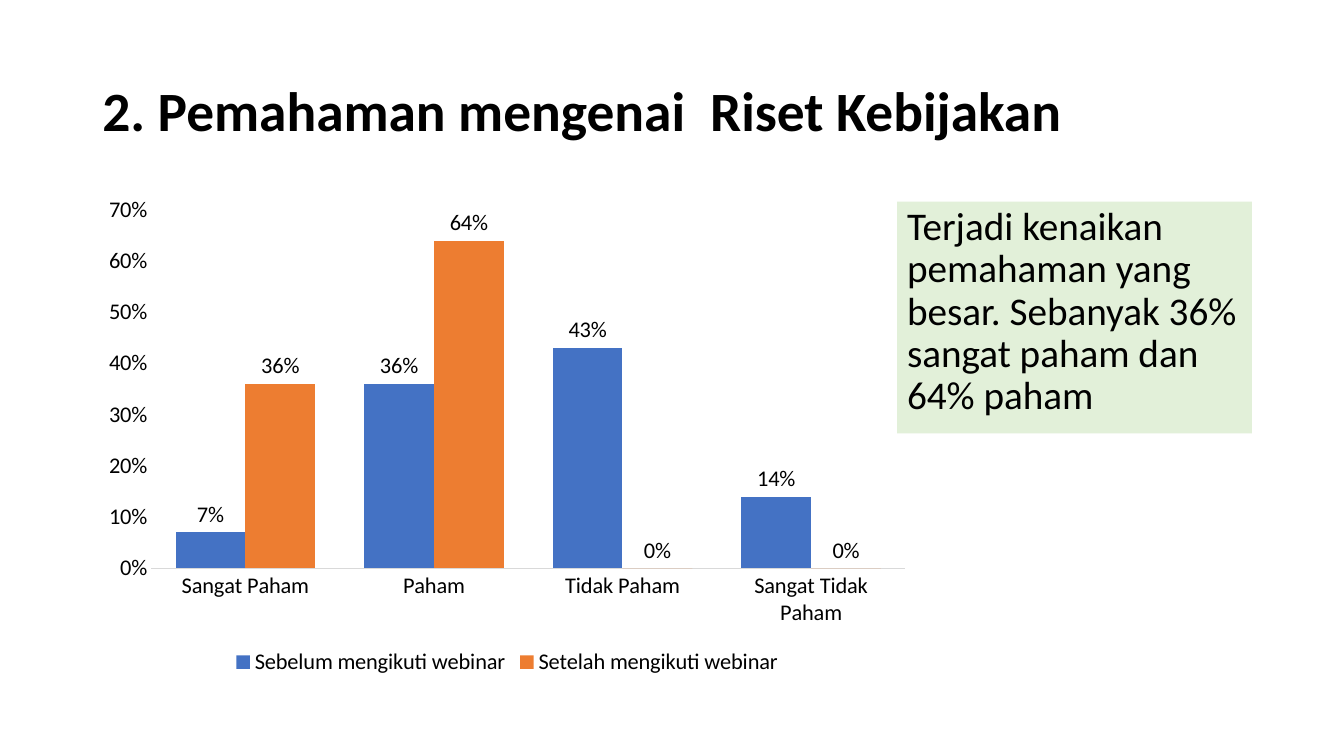
from dataclasses import dataclass

from pptx import Presentation
from pptx.chart.data import CategoryChartData
from pptx.dml.color import RGBColor
from pptx.enum.chart import XL_CHART_TYPE as ChartType
from pptx.enum.chart import XL_LABEL_POSITION as LabelPosition
from pptx.enum.chart import XL_LEGEND_POSITION as LegendPosition
from pptx.enum.chart import XL_TICK_MARK as TickMark
from pptx.enum.text import MSO_ANCHOR as Anchor
from pptx.util import Pt


@dataclass(frozen=True)
class Theme:
    font: str = "Calibri"
    ink: RGBColor = RGBColor(0x00, 0x00, 0x00)
    panel: RGBColor = RGBColor(0xE2, 0xF0, 0xD9)
    axis: RGBColor = RGBColor(0xD9, 0xD9, 0xD9)
    before: RGBColor = RGBColor(0x44, 0x72, 0xC4)
    after: RGBColor = RGBColor(0xED, 0x7D, 0x31)
    title_size: float = 39.6
    body_size: float = 28
    chart_size: float = 16


THEME = Theme()
PERCENT = "0%"
CATEGORIES = ["Sangat Paham", "Paham", "Tidak Paham", "Sangat Tidak Paham"]
SERIES = [
    ("Sebelum mengikuti webinar", [0.07, 0.36, 0.43, 0.14], THEME.before),
    ("Setelah mengikuti webinar", [0.36, 0.64, 0, 0], THEME.after),
]


def style_font(font, size, bold=False):
    font.name = THEME.font
    font.size = Pt(size)
    font.bold = bold
    font.color.rgb = THEME.ink


def add_text(page, bounds, text, size, anchor, bold=False, fill=None):
    box = page.shapes.add_textbox(*map(Pt, bounds))
    if fill is not None:
        box.fill.solid()
        box.fill.fore_color.rgb = fill
    frame = box.text_frame
    frame.word_wrap = True
    frame.vertical_anchor = anchor
    frame.text = text
    para = frame.paragraphs[0]
    para.line_spacing = 0.9
    for span in para.runs:
        style_font(span.font, size, bold)


def style_axes(chart):
    for axis in (chart.category_axis, chart.value_axis):
        axis.major_tick_mark = TickMark.NONE
        axis.minor_tick_mark = TickMark.NONE
        axis.has_major_gridlines = False
        style_font(axis.tick_labels.font, THEME.chart_size)
    category_line = chart.category_axis.format.line
    category_line.color.rgb = THEME.axis
    category_line.width = Pt(0.75)
    value_axis = chart.value_axis
    value_axis.format.line.fill.background()
    value_axis.minimum_scale = 0
    value_axis.maximum_scale = 0.7
    value_axis.major_unit = 0.1
    value_axis.tick_labels.number_format = PERCENT
    value_axis.tick_labels.number_format_is_linked = False


def style_series(series, color):
    series.format.fill.solid()
    series.format.fill.fore_color.rgb = color
    series.invert_if_negative = False
    labels = series.data_labels
    labels.show_value = True
    labels.position = LabelPosition.OUTSIDE_END
    labels.number_format = PERCENT
    labels.number_format_is_linked = False
    style_font(labels.font, THEME.chart_size)


def add_column_chart(page, bounds):
    data = CategoryChartData(number_format=PERCENT)
    data.categories = CATEGORIES
    for name, values, _ in SERIES:
        data.add_series(name, values)
    chart = page.shapes.add_chart(
        ChartType.COLUMN_CLUSTERED, *map(Pt, bounds), data
    ).chart
    chart.has_title = False
    style_font(chart.font, THEME.chart_size)
    chart.has_legend = True
    chart.legend.position = LegendPosition.BOTTOM
    chart.legend.include_in_layout = False
    style_font(chart.legend.font, THEME.chart_size)
    style_axes(chart)
    plot = chart.plots[0]
    plot.gap_width = 70
    plot.overlap = 0
    plot.vary_by_categories = False
    for series, (_, _, color) in zip(plot.series, SERIES):
        style_series(series, color)


def main():
    deck = Presentation()
    deck.slide_width, deck.slide_height = Pt(960), Pt(540)
    page = deck.slides.add_slide(deck.slide_layouts[6])
    add_text(
        page, (66, 28.8, 828, 104.4), "2. Pemahaman mengenai  Riset Kebijakan",
        THEME.title_size, Anchor.MIDDLE, bold=True,
    )
    add_text(
        page, (640.8, 144, 253.4, 165.6),
        "Terjadi kenaikan pemahaman yang besar. "
        "Sebanyak 36% sangat paham dan 64% paham",
        THEME.body_size, Anchor.TOP, fill=THEME.panel,
    )
    add_column_chart(page, (66, 133.2, 592.6, 352.8))
    deck.save("out.pptx")


if __name__ == "__main__":
    main()
